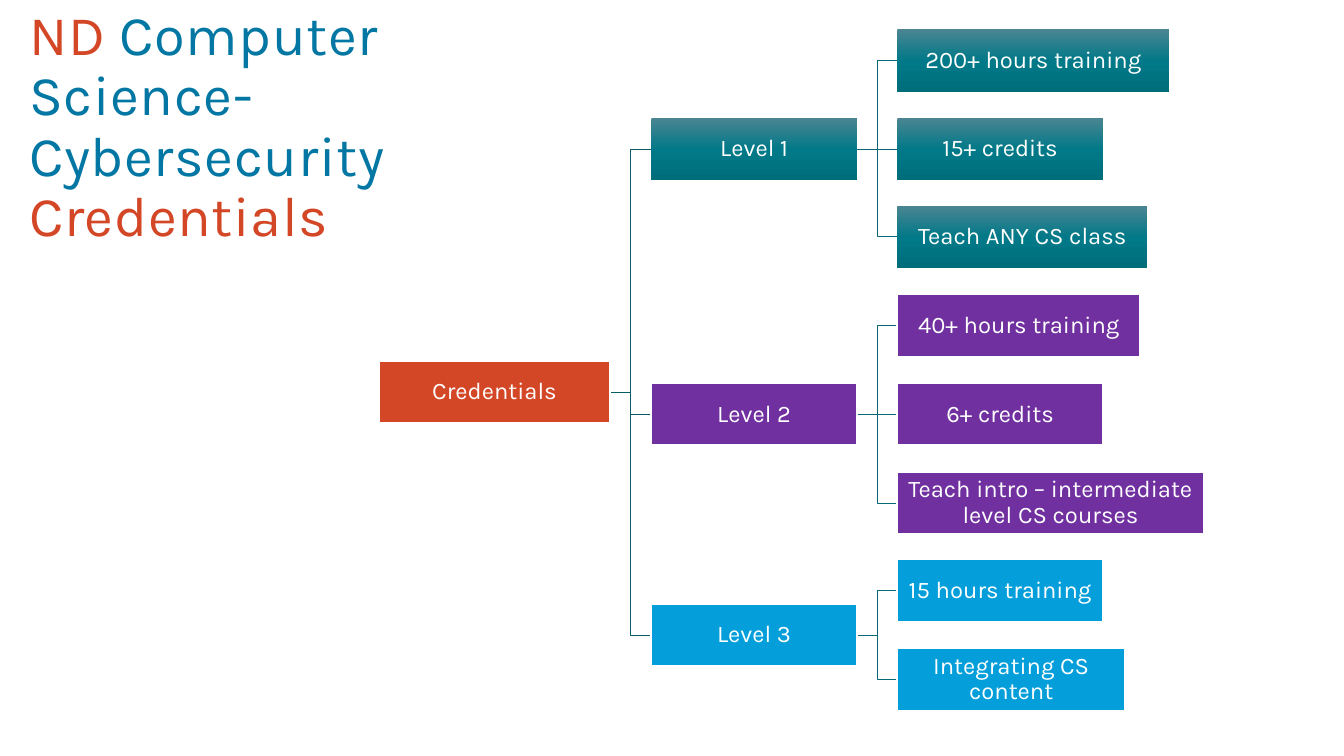
from copy import deepcopy

from pptx import Presentation
from pptx.dml.color import RGBColor
from pptx.enum.shapes import MSO_CONNECTOR, MSO_SHAPE
from pptx.enum.text import MSO_ANCHOR, PP_ALIGN
from pptx.oxml.ns import qn
from pptx.util import Pt

PX = 9144  # 100 px to the inch

THEME = {
    "font": "Karla",
    "title_size": 40,
    "box_size": 17,
    "white": "FFFFFF",
    "orange": "D34727",
    "blue": "0377A3",
    "purple": "7030A0",
    "sky": "049FDA",
    "teal": [(0, "4B8592"), (0.5, "027988"), (1, "006D7B")],
    "root_line": "065D68",
    "level_line": "076976",
}

ROOT_LEFT, LEVEL_LEFT, DETAIL_LEFT = 376, 646, 890
ROOT_WIDTH, LEVEL_WIDTH, BOX_HEIGHT = 229, 204, 62
FIRST_TOP, ROW_STEP = 29, 87.7

LEVELS = [
    ("Level 1", THEME["teal"],
     [("200+ hours training", 270), ("15+ credits", 204), ("Teach ANY CS class", 248)]),
    ("Level 2", THEME["purple"],
     [("40+ hours training", 241), ("6+ credits", 204),
      ("Teach intro – intermediate level CS courses", 304)]),
    ("Level 3", THEME["sky"],
     [("15 hours training", 204), ("Integrating CS content", 226)]),
]

deck = Presentation()
deck.slide_width, deck.slide_height = 1333 * PX, 750 * PX
page = deck.slides.add_slide(deck.slide_layouts[6])


def add_box(text, left, top, width, fill):
    box = page.shapes.add_shape(MSO_SHAPE.RECTANGLE, left * PX, round(top) * PX,
                                width * PX, BOX_HEIGHT * PX)
    box.shadow.inherit = False
    if isinstance(fill, list):
        box.fill.gradient()
        box.fill.gradient_angle = 270
        stops = box._element.spPr.find(".//" + qn("a:gsLst"))
        stops.insert(1, deepcopy(stops[0]))
        for stop, (position, color) in zip(box.fill.gradient_stops, fill):
            stop.position = position
            stop.color.rgb = RGBColor.from_string(color)
        box.line.fill.background()
    else:
        box.fill.solid()
        box.fill.fore_color.rgb = RGBColor.from_string(fill)
        box.line.color.rgb = RGBColor.from_string(THEME["white"])
        box.line.width = Pt(1.5)
    frame = box.text_frame
    frame.text = text
    frame.word_wrap = True
    frame.vertical_anchor = MSO_ANCHOR.MIDDLE
    frame.margin_left = frame.margin_right = frame.margin_top = frame.margin_bottom = PX
    para = frame.paragraphs[0]
    para.alignment = PP_ALIGN.CENTER
    para.line_spacing = 0.9
    font = para.runs[0].font
    font.name, font.size = THEME["font"], Pt(THEME["box_size"])
    font.color.rgb = RGBColor.from_string(THEME["white"])
    return box


def join(parent, child, color):
    level = abs(parent.top - child.top) <= PX
    kind = MSO_CONNECTOR.STRAIGHT if level else MSO_CONNECTOR.ELBOW
    wire = page.shapes.add_connector(kind, 0, 0, 0, 0)
    wire.begin_connect(parent, 3)
    wire.end_connect(child, 1)
    wire.line.color.rgb = RGBColor.from_string(color)
    wire.line.width = Pt(0.5)
    element = wire._element
    element.spPr.append(element.spPr.makeelement(qn("a:effectLst"), {}))
    element.getparent().insert(2, element)  # behind the boxes


# Levels, each centred on its own details
level_boxes = []
level_tops = []
row = 0
for name, fill, details in LEVELS:
    tops = [FIRST_TOP + ROW_STEP * (row + index) for index in range(len(details))]
    row += len(details)
    level_tops.append((tops[0] + tops[-1]) / 2)
    level_box = add_box(name, LEVEL_LEFT, level_tops[-1], LEVEL_WIDTH, fill)
    level_boxes.append(level_box)
    for (text, width), top in zip(details, tops):
        join(level_box, add_box(text, DETAIL_LEFT, top, width, fill), THEME["level_line"])

# Root, centred on the levels
root_top = (level_tops[0] + level_tops[-1]) / 2
root = add_box("Credentials", ROOT_LEFT, root_top, ROOT_WIDTH, THEME["orange"])
for level_box in level_boxes:
    join(root, level_box, THEME["root_line"])

# Title
title = page.shapes.add_textbox(19 * PX, 17 * PX, 602 * PX, 235 * PX)
frame = title.text_frame
frame.word_wrap = True
frame.vertical_anchor = MSO_ANCHOR.BOTTOM
frame.margin_right = 20 * PX
para = frame.paragraphs[0]
para.line_spacing = 0.9
for text, color in [("ND ", "orange"), ("Computer Science- Cybersecurity ", "blue"),
                    ("Credentials", "orange")]:
    span = para.add_run()
    span.text = text
    span.font.name, span.font.size = THEME["font"], Pt(THEME["title_size"])
    span.font.color.rgb = RGBColor.from_string(THEME[color])
    span.font._element.set("spc", "50")

deck.save("out.pptx")
